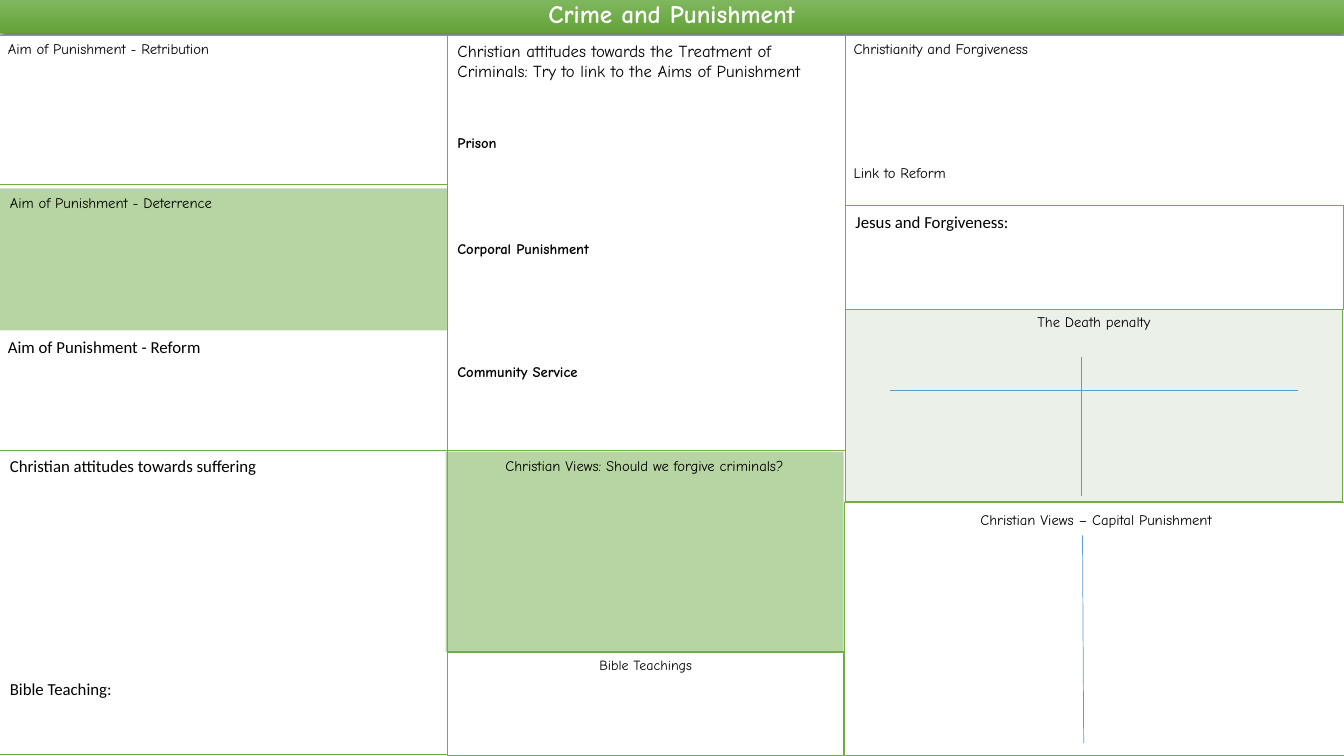
from dataclasses import dataclass

from lxml import etree
from pptx import Presentation
from pptx.dml import color
from pptx.enum import shapes, text
from pptx.oxml import ns
from pptx.util import Cm, Pt

GREEN, WHITE, BLACK, BLUE = "70AD47", "FFFFFF", "000000", "5B9BD5"
COMIC, CALIBRI = "Comic Neue", "Calibri"
LEFT, CENTER = text.PP_ALIGN.LEFT, text.PP_ALIGN.CENTER
TOP, MIDDLE, BOTTOM = text.MSO_ANCHOR.TOP, text.MSO_ANCHOR.MIDDLE, text.MSO_ANCHOR.BOTTOM


@dataclass
class Line:
    words: str
    size: float = 10.5
    bold: bool = False
    gap: float = 0


@dataclass
class Panel:
    place: tuple[float, float, float, float]
    lines: tuple[Line, ...] = ()
    fill: str | None = WHITE
    alpha: int = 100
    border: str | None = GREEN
    weight: float = 1
    align: text.PP_ALIGN = LEFT


@dataclass
class Note:
    place: tuple[float, float, float, float]
    lines: tuple[Line, ...]
    anchor: text.MSO_ANCHOR = TOP


PANELS = [
    Panel((11.28, 16.43, 9.98, 2.62), (Line("Bible Teachings", 10),), align=CENTER),
    Panel((21.31, 5.18, 12.55, 2.62), fill=None, weight=0.75),
    Panel((-0.05, 0.89, 11.33, 3.76), (Line("Aim of Punishment - Retribution"),)),
    Panel((24.46, 12.75, 6.83, 0.69), (Line("Christian Views – Capital Punishment"),), border=WHITE),
    Panel((0, 4.75, 11.33, 3.58), (Line("Aim of Punishment - Deterrence"),),
          fill=GREEN, alpha=50, border=None),
    Panel((21.26, 0.89, 12.65, 4.29),
          (Line("Christianity and Forgiveness"), Line("Link to Reform", gap=76))),
    Panel((0, 11.35, 11.28, 7.67), fill=None, weight=0.75),
    Panel((11.23, 11.38, 10.03, 5.05), (Line("Christian Views: Should we forgive criminals?"),),
          fill=GREEN, alpha=50, border=None, align=CENTER),
    Panel((21.29, 12.67, 12.6, 6.38), fill=None, weight=0.75),
    Panel((11.28, 0.89, 10.03, 10.46),
          (Line("Christian attitudes towards the Treatment of Criminals: "
                "Try to link to the Aims of Punishment", 12),
           Line("Prison", bold=True, gap=38),
           Line("Corporal Punishment", bold=True, gap=63),
           Line("Community Service", bold=True, gap=75.5))),
]
NOTES = [
    Note((-0.05, 7.32, 11.23, 1.8), (Line("Aim of Punishment - Reform", 12),), BOTTOM),
    Note((21.31, 5.21, 11.35, 0.76), (Line("Jesus and Forgiveness:", 12),)),
    Note((0, 11.35, 8.61, 6.4),
         (Line("Christian attitudes towards suffering", 12), Line("Bible Teaching:", 12, gap=145))),
]
RULES = [
    (27.25, 8.99, 27.25, 12.5),
    (22.43, 9.83, 32.72, 9.83),
    (27.28, 13.49, 27.31, 18.72),
]


def rgb(code: str) -> color.RGBColor:
    return color.RGBColor.from_string(code)


def add_xml(parent, tag: str, **attributes):
    return etree.SubElement(parent, ns.qn(tag), attributes)


def write(frame, lines, font: str, ink: str = BLACK, align=LEFT) -> None:
    frame.word_wrap = True
    frame.text = "\n".join(line.words for line in lines)
    for para, line in zip(frame.paragraphs, lines):
        para.alignment = align
        if line.gap:
            para.space_before = Pt(line.gap)
        for span in para.runs:
            span.font.name, span.font.size, span.font.bold = font, Pt(line.size), line.bold
            span.font.color.rgb = rgb(ink)


def draw_title(page) -> None:
    banner = page.shapes.title
    banner.left, banner.top, banner.width, banner.height = map(Cm, (0, -0.05, 33.86, 0.89))
    banner.fill.gradient()
    banner.fill.gradient_angle = 270
    for stop, code in zip(banner.fill.gradient_stops, ("81B861", "62A336")):
        stop.color.rgb = rgb(code)
    effects = add_xml(banner._element.spPr, "a:effectLst")
    shadow = add_xml(effects, "a:outerShdw", blurRad=str(Pt(4.5)), dist=str(Pt(1.5)),
                     dir="5400000", algn="ctr", rotWithShape="0")
    add_xml(add_xml(shadow, "a:srgbClr", val=BLACK), "a:alpha", val="63000")
    frame = banner.text_frame
    write(frame, [Line("Crime and Punishment", 18, True)], COMIC, WHITE, CENTER)
    frame.auto_size = text.MSO_AUTO_SIZE.NONE
    frame.vertical_anchor = MIDDLE
    frame.paragraphs[0].line_spacing = 0.9


def draw_panel(page, panel: Panel) -> None:
    box = page.shapes.add_shape(shapes.MSO_SHAPE.RECTANGLE, *map(Cm, panel.place))
    box.shadow.inherit = False
    if panel.fill:
        box.fill.solid()
        box.fill.fore_color.rgb = rgb(panel.fill)
        if panel.alpha < 100:
            tint = box._element.spPr.find(".//" + ns.qn("a:srgbClr"))
            add_xml(tint, "a:alpha", val=str(panel.alpha * 1000))
    else:
        box.fill.background()
    if panel.border:
        box.line.color.rgb = rgb(panel.border)
        box.line.width = Pt(panel.weight)
    else:
        box.line.fill.background()
    if panel.lines:
        box.text_frame.vertical_anchor = TOP
        write(box.text_frame, panel.lines, COMIC, align=panel.align)


def draw_note(page, note: Note) -> None:
    frame = page.shapes.add_textbox(*map(Cm, note.place)).text_frame
    frame.vertical_anchor = note.anchor
    write(frame, note.lines, CALIBRI)


def draw_death_penalty(page) -> None:
    table = page.shapes.add_table(1, 1, *map(Cm, (21.31, 7.8, 12.52, 4.85))).table
    cell = table.cell(0, 0)
    write(cell.text_frame, [Line("The Death penalty")], COMIC, align=CENTER)
    properties = cell._tc.get_or_add_tcPr()
    for side in ("a:lnL", "a:lnR", "a:lnT", "a:lnB"):
        edge = add_xml(properties, side, w=str(Pt(1)))
        add_xml(add_xml(edge, "a:solidFill"), "a:srgbClr", val=GREEN)
    cell.fill.solid()
    cell.fill.fore_color.rgb = rgb("EBF1E9")


def draw_rule(page, ends: tuple[float, float, float, float]) -> None:
    rule = page.shapes.add_connector(shapes.MSO_CONNECTOR.STRAIGHT, *map(Cm, ends))
    rule.line.color.rgb = rgb(BLUE)
    rule.line.width = Pt(0.5)
    add_xml(rule._element.spPr, "a:effectLst")


def main() -> None:
    deck = Presentation()
    deck.slide_width, deck.slide_height = Cm(33.87), Cm(19.05)
    page = deck.slides.add_slide(deck.slide_layouts[5])

    # Banner and worksheet panels
    draw_title(page)
    for panel in PANELS:
        draw_panel(page, panel)
    draw_death_penalty(page)

    # Headings over the open frames
    for note in NOTES:
        draw_note(page, note)

    # Dividers for arguments for and against
    for ends in RULES:
        draw_rule(page, ends)
    deck.save("out.pptx")


if __name__ == "__main__":
    main()
